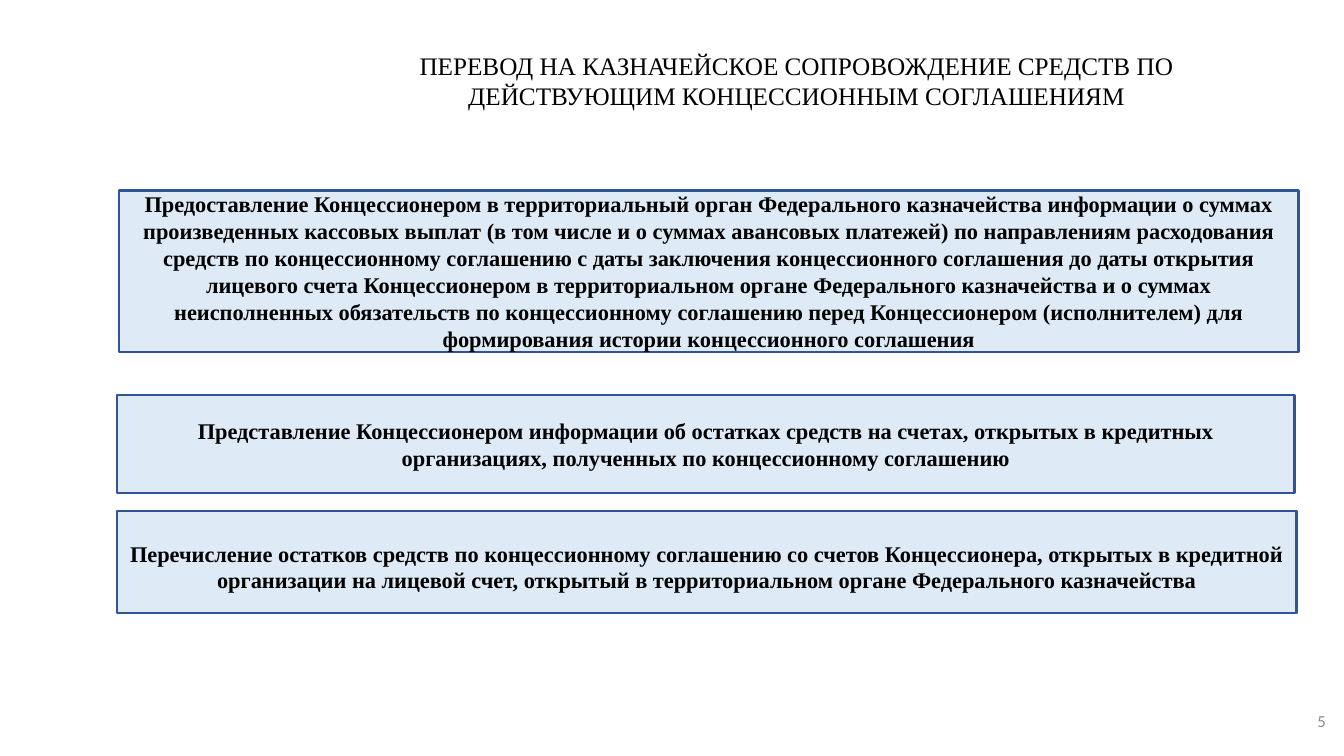
from dataclasses import dataclass

from pptx import Presentation
from pptx.dml.color import RGBColor
from pptx.enum.shapes import MSO_SHAPE as Shape
from pptx.enum.text import MSO_ANCHOR as Anchor, PP_ALIGN as Align
from pptx.util import Inches, Pt

TITLE = "ПЕРЕВОД НА КАЗНАЧЕЙСКОЕ СОПРОВОЖДЕНИЕ СРЕДСТВ ПО ДЕЙСТВУЮЩИМ КОНЦЕССИОННЫМ СОГЛАШЕНИЯМ"
PAGE_NUMBER = "5"
STEPS = [
    {
        "text": "Предоставление Концессионером в территориальный орган Федерального казначейства "
                "информации о суммах произведенных кассовых выплат (в том числе и о суммах авансовых "
                "платежей) по направлениям расходования средств по концессионному соглашению с даты "
                "заключения концессионного соглашения до даты открытия лицевого счета Концессионером "
                "в территориальном органе Федерального казначейства и о суммах неисполненных "
                "обязательств по концессионному соглашению перед Концессионером (исполнителем) для "
                "формирования истории концессионного соглашения",
        "area": (1.18, 1.89, 11.7, 1.6),
        "top_inset": 0.04,
    },
    {
        "text": "Представление Концессионером информации об остатках средств на счетах, открытых "
                "в кредитных организациях, полученных по концессионному соглашению",
        "area": (1.16, 3.92, 11.68, 0.97),
        "top_inset": 0.04,
    },
    {
        "text": "Перечисление остатков средств по концессионному соглашению со счетов Концессионера, "
                "открытых в кредитной организации на лицевой счет, открытый в территориальном органе "
                "Федерального казначейства",
        "area": (1.16, 5.07, 11.7, 1.01),
        "top_inset": 0.13,
    },
]


@dataclass(frozen=True)
class Theme:
    ink: str = "000000"
    muted: str = "8C8C8C"
    fill: str = "DEEBF7"
    border: str = "2F5597"
    serif: str = "Times New Roman"
    sans: str = "Calibri"
    title_size: int = 18
    step_size: int = 16
    number_size: int = 12


theme = Theme()


def write(box, text, size, font=theme.serif, color=theme.ink, bold=False,
          align=Align.CENTER, anchor=Anchor.MIDDLE, insets=(0.1, 0.05, 0.1, 0.05)):
    frame = box.text_frame
    frame.word_wrap = True
    frame.vertical_anchor = anchor
    (frame.margin_left, frame.margin_top,
     frame.margin_right, frame.margin_bottom) = map(Inches, insets)
    para = frame.paragraphs[0]
    para.alignment = align
    span = para.add_run()
    span.text = text
    span.font.name = font
    span.font.size = Pt(size)
    span.font.bold = bold
    span.font.color.rgb = RGBColor.from_string(color)


def add_step(page, step):
    box = page.shapes.add_shape(Shape.RECTANGLE, *map(Inches, step["area"]))
    box.shadow.inherit = False
    box.fill.solid()
    box.fill.fore_color.rgb = RGBColor.from_string(theme.fill)
    box.line.color.rgb = RGBColor.from_string(theme.border)
    box.line.width = Pt(1.5)
    write(box, step["text"], theme.step_size, bold=True,
          insets=(0.09, step["top_inset"], 0.09, 0.04))


def add_label(page, area, text, size, **style):
    write(page.shapes.add_textbox(*map(Inches, area)), text, size, **style)


def main():
    deck = Presentation()
    deck.slide_width, deck.slide_height = Inches(13.33), Inches(7.5)
    page = deck.slides.add_slide(deck.slide_layouts[6])
    for step in STEPS:
        add_step(page, step)
    add_label(page, (3.49, 0.45, 8.82, 0.71), TITLE, theme.title_size, anchor=Anchor.TOP)
    add_label(page, (10.25, 6.95, 3, 0.4), PAGE_NUMBER, theme.number_size,
              font=theme.sans, color=theme.muted, align=Align.RIGHT)
    deck.save("out.pptx")


if __name__ == "__main__":
    main()
